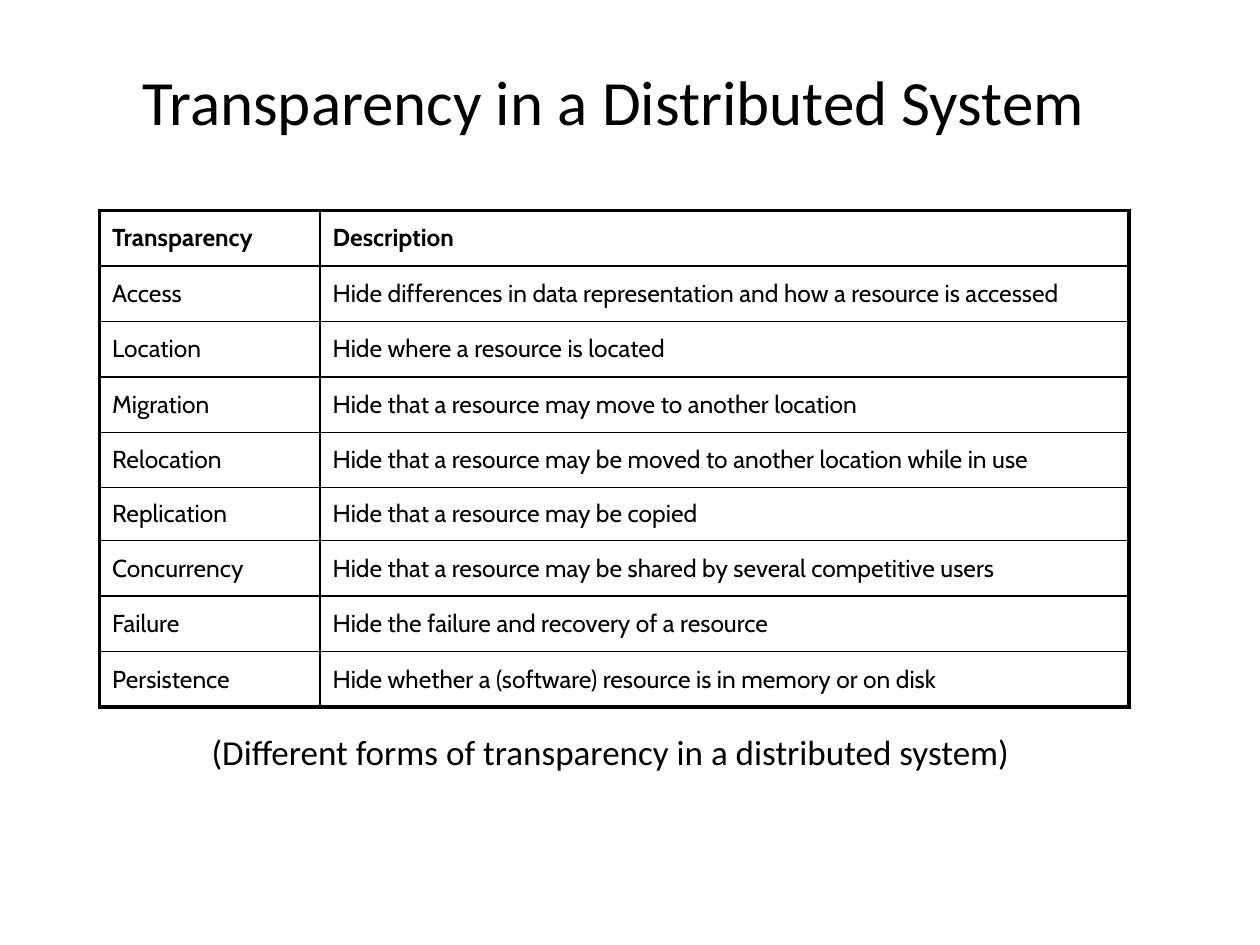
from lxml.etree import SubElement
from pptx import Presentation
from pptx.dml.color import RGBColor
from pptx.enum.text import MSO_ANCHOR as Anchor, PP_ALIGN as Align
from pptx.oxml.ns import qn
from pptx.util import Inches, Pt

COLORS = {"ink": "000000"}
WIDTH, HEIGHT = Inches(10), Inches(7.5)
COLUMNS = [17.5, 64.2]
ROW, REPLICATION_ROW = 5.87, 5.6
THIN, THICK = 1, 2.25

ROWS = [
    ("Transparency", "Description"),
    ("Access", "Hide differences in data representation and how a resource is accessed"),
    ("Location", "Hide where a resource is located"),
    ("Migration", "Hide that a resource may move to another location"),
    ("Relocation", "Hide that a resource may be moved to another location while in use"),
    ("Replication", "Hide that a resource may be copied"),
    ("Concurrency", "Hide that a resource may be shared by several competitive users"),
    ("Failure", "Hide the failure and recovery of a resource"),
    ("Persistence", "Hide whether a (software) resource is in memory or on disk"),
]


def across(percent):
    return round(WIDTH * percent / 100)


def down(percent):
    return round(HEIGHT * percent / 100)


def write(tf, text, size, font="Calibri", bold=False, align=Align.LEFT, before=0):
    """Fill the first paragraph; before is a share of the text size."""
    p = tf.paragraphs[0]
    p.alignment = align
    p.space_before = Pt(size * before)
    r = p.add_run()
    r.text = text
    r.font.size = Pt(size)
    r.font.name = font
    r.font.bold = bold
    r.font.color.rgb = RGBColor.from_string(COLORS["ink"])


def add_text(slide, box, text, anchor=Anchor.TOP, **fmt):
    """Add a text box; box holds left, top, width, height in slide percent."""
    x, y, w, h = box
    sp = slide.shapes.add_textbox(across(x), down(y), across(w), down(h))
    tf = sp.text_frame
    tf.word_wrap = True
    tf.vertical_anchor = anchor
    write(tf, text, **fmt)


def set_borders(cell, widths):
    """Draw the left, right, top and bottom borders, in points."""
    tc_pr = cell._tc.get_or_add_tcPr()
    for side, width in zip("LRTB", widths):
        ln = SubElement(tc_pr, qn(f"a:ln{side}"), w=str(Pt(width)))
        fill = SubElement(ln, qn("a:solidFill"))
        SubElement(fill, qn("a:srgbClr"), val=COLORS["ink"])


def add_table(slide, left, top):
    heights = [REPLICATION_ROW if name == "Replication" else ROW for name, _ in ROWS]
    table = slide.shapes.add_table(
        len(ROWS), len(COLUMNS), across(left), down(top),
        across(sum(COLUMNS)), down(sum(heights))).table
    table.first_row = table.horz_banding = False
    for column, width in zip(table.columns, COLUMNS):
        column.width = across(width)
    last_row, last_col = len(ROWS) - 1, len(COLUMNS) - 1
    for i, texts in enumerate(ROWS):
        table.rows[i].height = down(heights[i])
        for j, text in enumerate(texts):
            cell = table.cell(i, j)
            outer = (j == 0, j == last_col, i == 0, i == last_row)
            set_borders(cell, [THICK if edge else THIN for edge in outer])
            cell.fill.background()
            cell.vertical_anchor = Anchor.MIDDLE
            write(cell.text_frame, text, 14, font="Cabin", bold=i == 0, before=0.2)


def main():
    prs = Presentation()
    prs.slide_width, prs.slide_height = WIDTH, HEIGHT
    slide = prs.slides.add_slide(prs.slide_layouts[6])
    add_text(slide, (6.2, 2.27, 85, 16.67), "Transparency in a Distributed System",
             anchor=Anchor.MIDDLE, size=36, align=Align.CENTER)
    add_text(slide, (2.2, 76.67, 92.5, 5.73),
             "(Different forms of transparency in a distributed system)",
             size=20, align=Align.CENTER, before=0.5)
    add_table(slide, 7.9, 22.27)
    prs.save("out.pptx")


if __name__ == "__main__":
    main()
